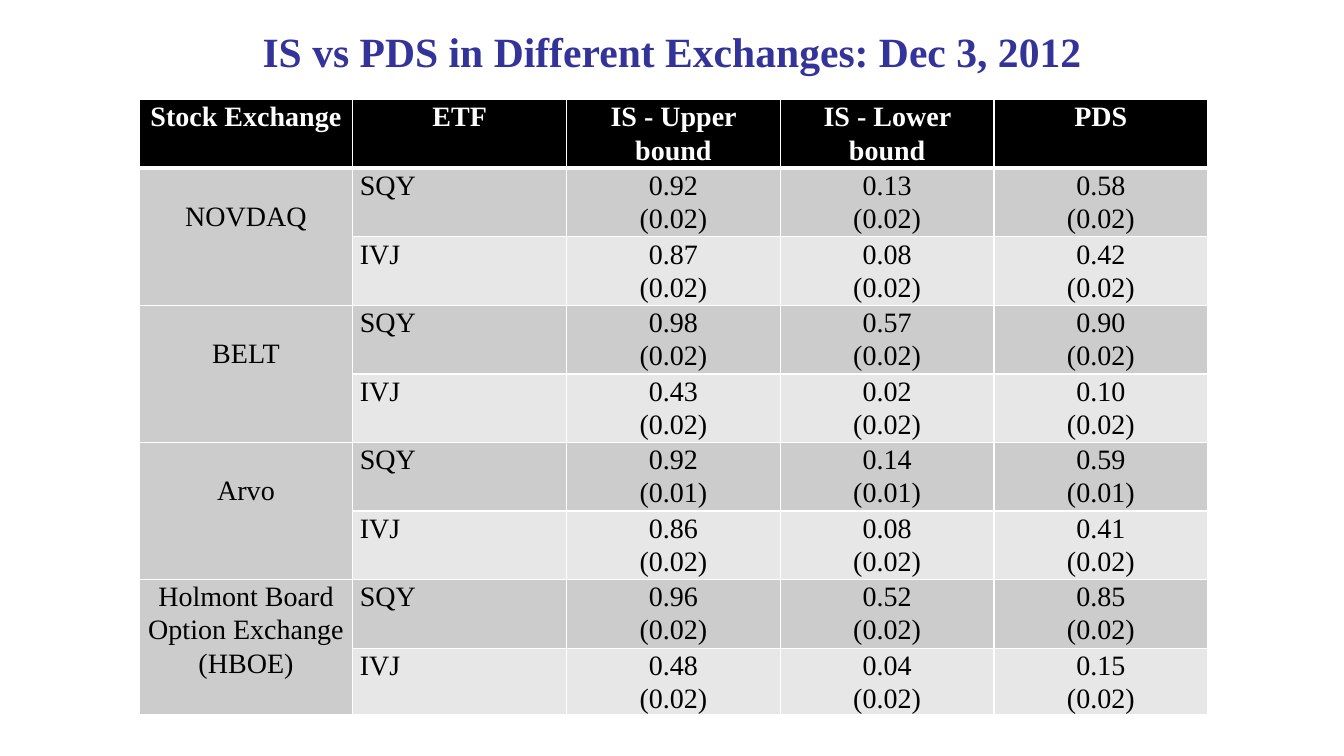
from lxml.etree import SubElement
from pptx import Presentation
from pptx.dml.color import RGBColor
from pptx.enum.text import MSO_ANCHOR, PP_ALIGN
from pptx.oxml.ns import qn
from pptx.util import Inches, Pt

TITLE = "IS vs PDS in Different Exchanges: Dec 3, 2012"
HEADERS = ["Stock Exchange", "ETF", "IS - Upper bound", "IS - Lower bound", "PDS"]
# Exchange, then for each fund: ticker, three estimates, their standard error
EXCHANGES = [
    ("NOVDAQ", [("SQY", ["0.92", "0.13", "0.58"], "(0.02)"),
                ("IVJ", ["0.87", "0.08", "0.42"], "(0.02)")]),
    ("BELT", [("SQY", ["0.98", "0.57", "0.90"], "(0.02)"),
              ("IVJ", ["0.43", "0.02", "0.10"], "(0.02)")]),
    ("Arvo", [("SQY", ["0.92", "0.14", "0.59"], "(0.01)"),
              ("IVJ", ["0.86", "0.08", "0.41"], "(0.02)")]),
    ("Holmont Board Option Exchange (HBOE)",
     [("SQY", ["0.96", "0.52", "0.85"], "(0.02)"),
      ("IVJ", ["0.48", "0.04", "0.15"], "(0.02)")]),
]

FONT = "Times New Roman"
NAVY = RGBColor(0x33, 0x33, 0x99)
BLACK = RGBColor(0x00, 0x00, 0x00)
WHITE = RGBColor(0xFF, 0xFF, 0xFF)
DARK_BAND = RGBColor(0xCC, 0xCC, 0xCC)
LIGHT_BAND = RGBColor(0xE7, 0xE7, 0xE7)

COLUMN_WIDTH, ROW_HEIGHT, LAST_ROW_HEIGHT = 2.12, 0.68, 0.66
ROW_COUNT = 1 + sum(len(funds) for _, funds in EXCHANGES)


def add_text(paragraph, text, size, color, bold, align):
    paragraph.alignment = align
    run = paragraph.add_run()
    run.text = text
    run.font.name = FONT
    run.font.size = Pt(size)
    run.font.bold = bold
    run.font.color.rgb = color


def set_borders(cell, top=1, bottom=1):
    properties = cell._tc.get_or_add_tcPr()
    for side, points in (("L", 1), ("R", 1), ("T", top), ("B", bottom)):
        line = SubElement(properties, qn(f"a:ln{side}"), w=str(Pt(points)))
        SubElement(SubElement(line, qn("a:solidFill")), qn("a:srgbClr"), val=str(WHITE))


def fill_cell(cell, lines, fill, color=BLACK, bold=False, align=PP_ALIGN.CENTER,
              top=1, bottom=1):
    set_borders(cell, top, bottom)
    cell.fill.solid()
    cell.fill.fore_color.rgb = fill
    cell.margin_left = cell.margin_right = Inches(0.07)
    cell.margin_top = cell.margin_bottom = 0
    frame = cell.text_frame
    for index, text in enumerate(lines):
        paragraph = frame.add_paragraph() if index else frame.paragraphs[0]
        paragraph.line_spacing = 1.07
        add_text(paragraph, text, 20, color, bold, align)


presentation = Presentation()
presentation.slide_width, presentation.slide_height = Inches(13.33), Inches(7.5)
slide = presentation.slides.add_slide(presentation.slide_layouts[5])

title = slide.shapes.title
title.left, title.top, title.width, title.height = map(Inches, (0.67, 0.21, 12, 0.69))
title_frame = title.text_frame
title_frame.vertical_anchor = MSO_ANCHOR.MIDDLE
title_frame.margin_top, title_frame.margin_bottom = 0, Inches(0.1)
add_text(title_frame.paragraphs[0], TITLE, 29.7, NAVY, True, PP_ALIGN.CENTER)

table = slide.shapes.add_table(
    ROW_COUNT, len(HEADERS), Inches(1.38), Inches(0.99),
    Inches(COLUMN_WIDTH * len(HEADERS)),
    Inches(ROW_HEIGHT * (ROW_COUNT - 1) + LAST_ROW_HEIGHT)).table
for column in table.columns:
    column.width = Inches(COLUMN_WIDTH)
for row in table.rows:
    row.height = Inches(ROW_HEIGHT)
table.rows[ROW_COUNT - 1].height = Inches(LAST_ROW_HEIGHT)

for column, header in enumerate(HEADERS):
    fill_cell(table.cell(0, column), [header], BLACK, WHITE, True, bottom=3)

row = 1
for exchange, funds in EXCHANGES:
    exchange_cell = table.cell(row, 0)
    exchange_cell.merge(table.cell(row + len(funds) - 1, 0))
    fill_cell(exchange_cell, [exchange], DARK_BAND, top=3 if row == 1 else 1)
    if " " not in exchange:  # one-line names sit on the second line
        exchange_cell.margin_top = Inches(0.31)
    for (ticker, estimates, error), band in zip(funds, (DARK_BAND, LIGHT_BAND)):
        top = 3 if row == 1 else 1
        fill_cell(table.cell(row, 1), [ticker], band, align=PP_ALIGN.LEFT, top=top)
        for column, estimate in enumerate(estimates, start=2):
            fill_cell(table.cell(row, column), [estimate, error], band, top=top)
        row += 1

presentation.save("out.pptx")
